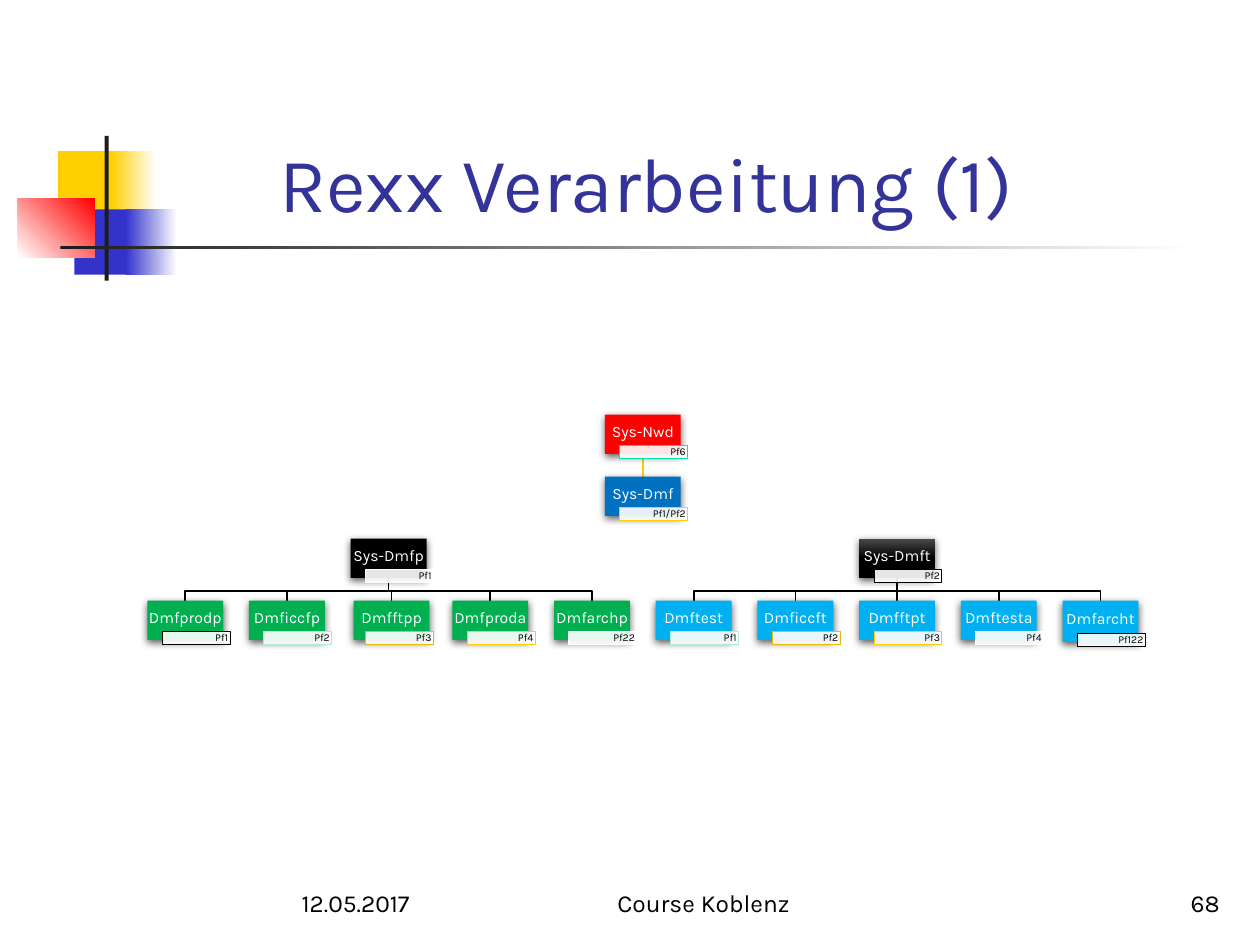
import pptx
import pptx.util
import pptx.dml.color
import pptx.enum.shapes
import pptx.enum.text
import pptx.oxml
import pptx.oxml.ns
import lxml.etree
from pptx.util import Cm

THEME = {
    "font": "Karla", "title_size": 44, "footer_size": 14, "box_size": 9, "tag_size": 6,
    "title": "333399", "white": "FFFFFF", "black": "000000", "ink": "1C1C1C",
    "yellow": "FFCF01", "gold": "E7BB01", "violet": "3333CC", "red": "FF0000",
    "blue": "0070C0", "green": "00B050", "sky": "00B0F0", "grey": "4B4B4B",
    "teal": "00E4A8", "mint": "AAEFD1",
}

TITLE = "Rexx Verarbeitung (1)"
FOOTERS = [
    ("12.05.2017", 3.23, 5.28, "RIGHT"),
    ("Course Koblenz", 10.16, 8.05, "CENTER"),
    ("68", 19.56, 5.28, "RIGHT"),
]
DECORATIONS = [
    (1.17, 3.05, 1.22, 1.32, ["yellow"], 0),
    (2.24, 3.05, 0.91, 1.32, ["yellow", "white"], 0),
    (1.5, 4.22, 1.17, 1.32, ["violet"], 0),
    (2.54, 4.22, 1.02, 1.32, ["violet", "white"], 0),
    (0.36, 4.01, 1.55, 1.18, ["white", "red"], 45),
    (2.11, 2.74, 0.08, 2.92, ["ink"], 0),
    (1.22, 4.95, 22.86, 0.08, ["ink", "white"], 0),
]
PARENTS = [
    ("Sys-Nwd", "Pf6", 4.5, 0, "red", "teal"),
    ("Sys-Dmf", "Pf1/Pf2", 4.5, 1, "blue", "yellow"),
    ("Sys-Dmfp", "Pf1", 2, 2, "black", "white"),
    ("Sys-Dmft", "Pf2", 7, 2, "black", "black"),
]
LEAVES = [
    ("Dmfprodp", "Pf1", "black"), ("Dmficcfp", "Pf2", "mint"),
    ("Dmfftpp", "Pf3", "gold"), ("Dmfproda", "Pf4", "yellow"),
    ("Dmfarchp", "Pf22", "white"), ("Dmftest", "Pf1", "mint"),
    ("Dmficcft", "Pf2", "gold"), ("Dmfftpt", "Pf3", "yellow"),
    ("Dmftesta", "Pf4", "white"), ("Dmfarcht", "Pf122", "black"),
]
NODES = PARENTS + [
    (name, key, column, 3, "green" if column < 5 else "sky", edge)
    for column, (name, key, edge) in enumerate(LEAVES)
]
LINKS = [("Sys-Nwd", "Sys-Dmf", "yellow"), ("Sys-Dmf", "Sys-Dmfp", "white"),
         ("Sys-Dmf", "Sys-Dmft", "white")]
LINKS += [("Sys-Dmfp" if column < 5 else "Sys-Dmft", leaf[0], "black")
          for column, leaf in enumerate(LEAVES)]
SHIFT = {"Dmfftpp": 0.06}
EXTRA_HEIGHT = {"Dmfarcht": 0.04}

LEFT, TOP, COLUMN_PITCH, ROW_PITCH = 2.97, 8.36, 2.05, 1.25
BOX_WIDTH, BOX_HEIGHT = 1.53, 0.79
TAG_WIDTH, TAG_HEIGHT, TAG_RIGHT, TAG_DOWN = 1.37, 0.26, 0.3, 0.62
ELBOW_DROP = 0.26


def color(name):
    return pptx.dml.color.RGBColor.from_string(THEME[name])


def paint(shape, names, angle=0, last_stop=1.0):
    if len(names) == 1:
        shape.fill.solid()
        shape.fill.fore_color.rgb = color(names[0])
        return
    shape.fill.gradient()
    shape.fill.gradient_angle = angle
    for stop, name, position in zip(shape.fill.gradient_stops, names, (0, last_stop)):
        stop.color.rgb = color(name)
        stop.position = position


def write(shape, text, size, ink, align, anchor, margins=None, wrap=True):
    frame = shape.text_frame
    frame.text = text
    frame.word_wrap = wrap
    frame.auto_size = pptx.enum.text.MSO_AUTO_SIZE.NONE
    frame.vertical_anchor = pptx.enum.text.MSO_ANCHOR[anchor]
    if margins:
        (frame.margin_left, frame.margin_top,
         frame.margin_right, frame.margin_bottom) = [Cm(value) for value in margins]
    paragraph = frame.paragraphs[0]
    paragraph.alignment = pptx.enum.text.PP_ALIGN[align]
    font = paragraph.runs[0].font
    font.name, font.size = THEME["font"], pptx.util.Pt(THEME[size])
    font.color.rgb = color(ink)
    return paragraph


def add_rectangle(slide, left, top, width, height, names, angle=0, last_stop=1.0):
    shape = slide.shapes.add_shape(pptx.enum.shapes.MSO_SHAPE.RECTANGLE,
                                   Cm(left), Cm(top), Cm(width), Cm(height))
    shape.shadow.inherit = False
    shape.line.fill.background()
    paint(shape, names, angle, last_stop)
    return shape


def add_shadow(shape):
    effects = shape._element.spPr.find(pptx.oxml.ns.qn("a:effectLst"))
    effects.append(pptx.oxml.parse_xml(
        f'<a:outerShdw {pptx.oxml.ns.nsdecls("a")} blurRad="57150" dist="19050" '
        'dir="5400000" algn="ctr" rotWithShape="0"><a:srgbClr val="000000">'
        '<a:alpha val="63000"/></a:srgbClr></a:outerShdw>'))


def place(node):
    name, _, column, row = node[:4]
    return LEFT + column * COLUMN_PITCH, TOP + row * ROW_PITCH, SHIFT.get(name, 0)


def add_link(slide, parent, child, line_color):
    parent_left, parent_top, _ = place(parent)
    child_left, end_y, shift = place(child)
    start_x = parent_left + BOX_WIDTH / 2
    start_y = parent_top + BOX_HEIGHT
    end_x = child_left + shift + BOX_WIDTH / 2
    if start_x == end_x:
        shape = slide.shapes.add_connector(pptx.enum.shapes.MSO_CONNECTOR.STRAIGHT,
                                           Cm(start_x), Cm(start_y), Cm(end_x), Cm(end_y))
        lxml.etree.SubElement(shape._element.spPr, pptx.oxml.ns.qn("a:effectLst"))
    else:
        elbow_y = start_y + ELBOW_DROP
        builder = slide.shapes.build_freeform(Cm(start_x), Cm(start_y))
        builder.add_line_segments([(Cm(start_x), Cm(elbow_y)), (Cm(end_x), Cm(elbow_y)),
                                   (Cm(end_x), Cm(end_y))], close=False)
        shape = builder.convert_to_shape()
        shape.fill.background()
        shape.shadow.inherit = False
    shape.line.color.rgb = color(line_color)
    shape.line.width = pptx.util.Pt(1)


def add_node(slide, node):
    name, key, _, _, fill, edge = node
    left, top, shift = place(node)
    extra = EXTRA_HEIGHT.get(name, 0)
    names = ["grey", "black"] if name == "Sys-Dmft" else [fill]
    box = add_rectangle(slide, left + shift, top, BOX_WIDTH, BOX_HEIGHT + extra,
                        names, 270, 0.5)
    add_shadow(box)
    write(box, name, "box_size", "white", "CENTER", "MIDDLE",
          (0.02, 0.02, 0.02, 0.11), wrap=False).line_spacing = 0.9

    tag = add_rectangle(slide, left + TAG_RIGHT, top + TAG_DOWN + extra,
                        TAG_WIDTH, TAG_HEIGHT, ["white"])
    fill_color = tag._element.spPr.find(".//" + pptx.oxml.ns.qn("a:srgbClr"))
    lxml.etree.SubElement(fill_color, pptx.oxml.ns.qn("a:alpha")).set("val", "90000")
    tag.line.color.rgb = color(edge)
    tag.line.width = pptx.util.Pt(0.5)
    write(tag, key, "tag_size", "black", "RIGHT", "MIDDLE",
          (0.04, 0, 0.04, 0)).line_spacing = 0.9


def main():
    presentation = pptx.Presentation()
    presentation.slide_width, presentation.slide_height = Cm(25.4), Cm(19.05)
    slide = presentation.slides.add_slide(presentation.slide_layouts[5])

    for decoration in DECORATIONS:
        add_rectangle(slide, *decoration)

    title = slide.shapes.title
    title.left, title.top, title.width, title.height = Cm(0.64), Cm(0.64), Cm(24.79), Cm(4.09)
    write(title, TITLE, "title_size", "title", "CENTER", "BOTTOM")

    nodes = {node[0]: node for node in NODES}
    for parent, child, line_color in LINKS:
        add_link(slide, nodes[parent], nodes[child], line_color)
    for node in NODES:
        add_node(slide, node)

    for text, left, width, align in FOOTERS:
        footer = slide.shapes.add_textbox(Cm(left), Cm(17.35), Cm(width), Cm(1.27))
        write(footer, text, "footer_size", "black", align, "BOTTOM")

    presentation.save("out.pptx")


if __name__ == "__main__":
    main()
